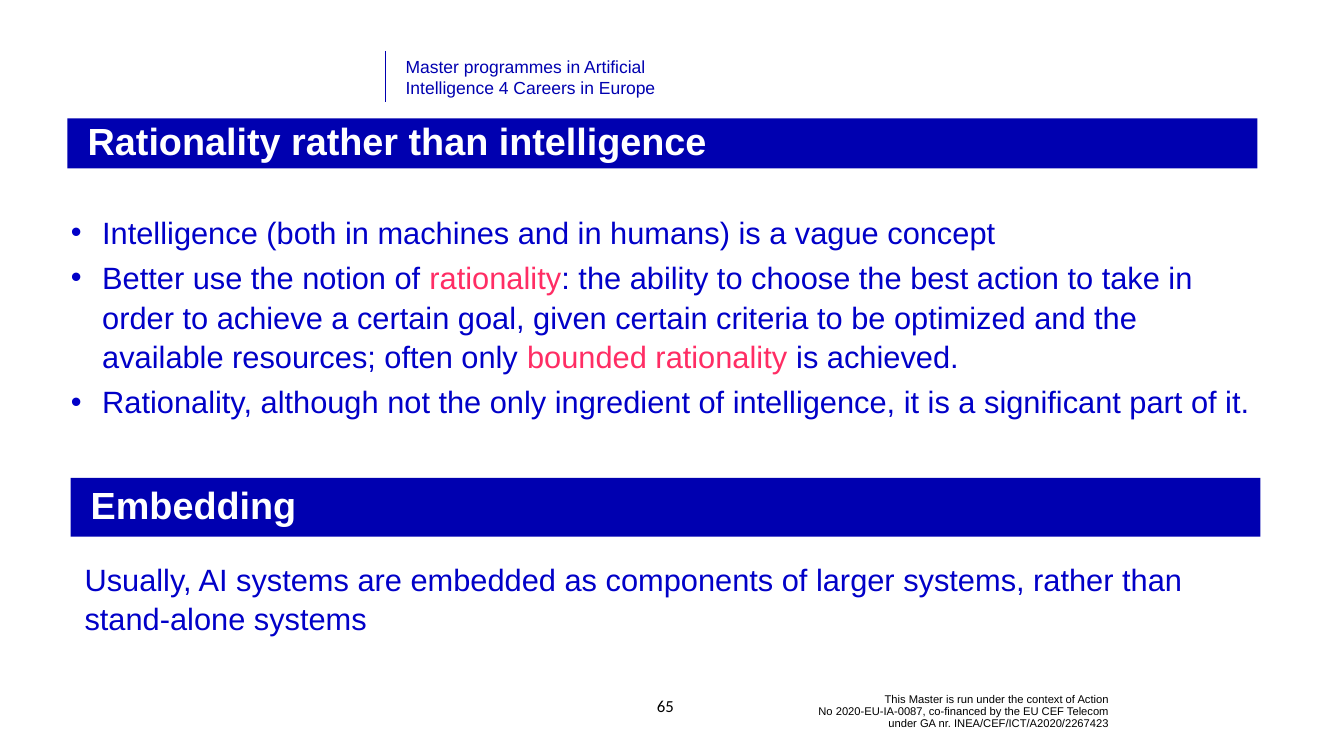
from lxml import etree
from pptx import Presentation
from pptx.dml.color import RGBColor
from pptx.enum.shapes import MSO_CONNECTOR as CONN, MSO_SHAPE as SHAPE
from pptx.enum.text import MSO_ANCHOR as ANCHOR, PP_ALIGN as ALIGN
from pptx.oxml.ns import qn
from pptx.util import Inches, Pt

WIDTH, HEIGHT = Inches(26.67), Inches(15)
NAVY = RGBColor(0x00, 0x00, 0xB0)
BLUE = RGBColor(0x01, 0x00, 0xC8)
PINK = RGBColor(0xFF, 0x2D, 0x64)
WHITE = RGBColor(0xFF, 0xFF, 0xFF)
BLACK = RGBColor(0x00, 0x00, 0x00)
BAR_WIDTH = 88.53

BULLETS = [
    [("Intelligence (both in machines and in humans) is a vague concept", BLUE)],
    [
        ("Better use the notion of ", BLUE),
        ("rationality", PINK),
        (": the ability to choose the best action to take in order to achieve "
         "a certain goal, given certain criteria to be optimized and the "
         "available resources; often only ", BLUE),
        ("bounded rationality ", PINK),
        ("is achieved.", BLUE),
    ],
    [("Rationality, although not the only ingredient of intelligence, "
      "it is a significant part of it.", BLUE)],
]
EMBEDDING = [[("Usually, AI systems are embedded as components of larger systems, "
               "rather than stand-alone systems", BLUE)]]


def percent(x, y, w, h):
    return [int(side * share / 100)
            for side, share in zip((WIDTH, HEIGHT) * 2, (x, y, w, h))]


def style(r, size, color, name="Arial", bold=False):
    r.font.size = Pt(size)
    r.font.name = name
    r.font.bold = bold
    r.font.color.rgb = color


def add_box(slide, area, anchor=ANCHOR.TOP):
    tf = slide.shapes.add_textbox(*percent(*area)).text_frame
    tf.word_wrap = True
    tf.vertical_anchor = anchor
    return tf


def add_label(slide, area, text, size, color, name="Arial",
              align=ALIGN.LEFT, anchor=ANCHOR.MIDDLE, spacing=1.0):
    p = add_box(slide, area, anchor).paragraphs[0]
    p.text = text
    p.alignment = align
    p.line_spacing = spacing
    for r in p.runs:
        style(r, size, color, name)


def add_heading(slide, area, text):
    sp = slide.shapes.add_shape(SHAPE.RECTANGLE, *percent(*area))
    sp.shadow.inherit = False
    sp.fill.solid()
    sp.fill.fore_color.rgb = NAVY
    sp.line.fill.background()
    tf = sp.text_frame
    tf.text = text
    tf.word_wrap = True
    tf.vertical_anchor = ANCHOR.MIDDLE
    tf.margin_left = Inches(0.4)
    p = tf.paragraphs[0]
    p.alignment = ALIGN.LEFT
    p.line_spacing = 0.9
    style(p.runs[0], 54, WHITE, bold=True)


def add_bullet(p):
    pPr = p._p.get_or_add_pPr()
    indent = Inches(0.62)
    pPr.set("marL", str(indent))
    pPr.set("indent", str(-indent))
    etree.SubElement(pPr, qn("a:buFont"), typeface="Arial")
    etree.SubElement(pPr, qn("a:buChar"), char="•")


def add_body(slide, area, paragraphs, bulleted=False):
    tf = add_box(slide, area)
    for i, parts in enumerate(paragraphs):
        p = tf.add_paragraph() if i else tf.paragraphs[0]
        if bulleted:
            add_bullet(p)
        p.line_spacing = 1.07
        p.space_after = Pt(8)
        for text, color in parts:
            r = p.add_run()
            r.text = text
            style(r, 44, color)


def add_divider(slide, x, top, bottom):
    line = slide.shapes.add_connector(CONN.STRAIGHT, *percent(x, top, x, bottom))
    line.line.color.rgb = NAVY
    line.line.width = Pt(0.5)
    etree.SubElement(line._element.spPr, qn("a:effectLst"))


def main():
    prs = Presentation()
    prs.slide_width, prs.slide_height = WIDTH, HEIGHT
    slide = prs.slides.add_slide(prs.slide_layouts[6])

    add_label(slide, (56.32, 91.6, 26.55, 5.07),
              "This Master is run under the context of Action\n"
              "No 2020-EU-IA-0087, co-financed by the EU CEF Telecom\n"
              "under GA nr. INEA/CEF/ICT/A2020/2267423",
              16, BLACK, align=ALIGN.RIGHT, spacing=0.9)
    add_divider(slide, 28.68, 6.73, 13.53)
    add_label(slide, (29.81, 7.07, 23.88, 6.27),
              "Master programmes in Artificial\nIntelligence 4 Careers in Europe",
              25, NAVY, anchor=ANCHOR.TOP)
    add_heading(slide, (5.02, 15.67, BAR_WIDTH, 6.6),
                "Rationality rather than intelligence")
    add_label(slide, (47.43, 90.73, 4.16, 5.33), "65", 24, BLACK,
              name="Calibri", align=ALIGN.CENTER)
    add_body(slide, (4.91, 27.6, 88.75, 28.2), BULLETS, bulleted=True)
    add_heading(slide, (5.25, 63.2, BAR_WIDTH, 7.8), "Embedding")
    add_body(slide, (5.92, 73.47, 88.08, 10.87), EMBEDDING)

    prs.save("out.pptx")


if __name__ == "__main__":
    main()
